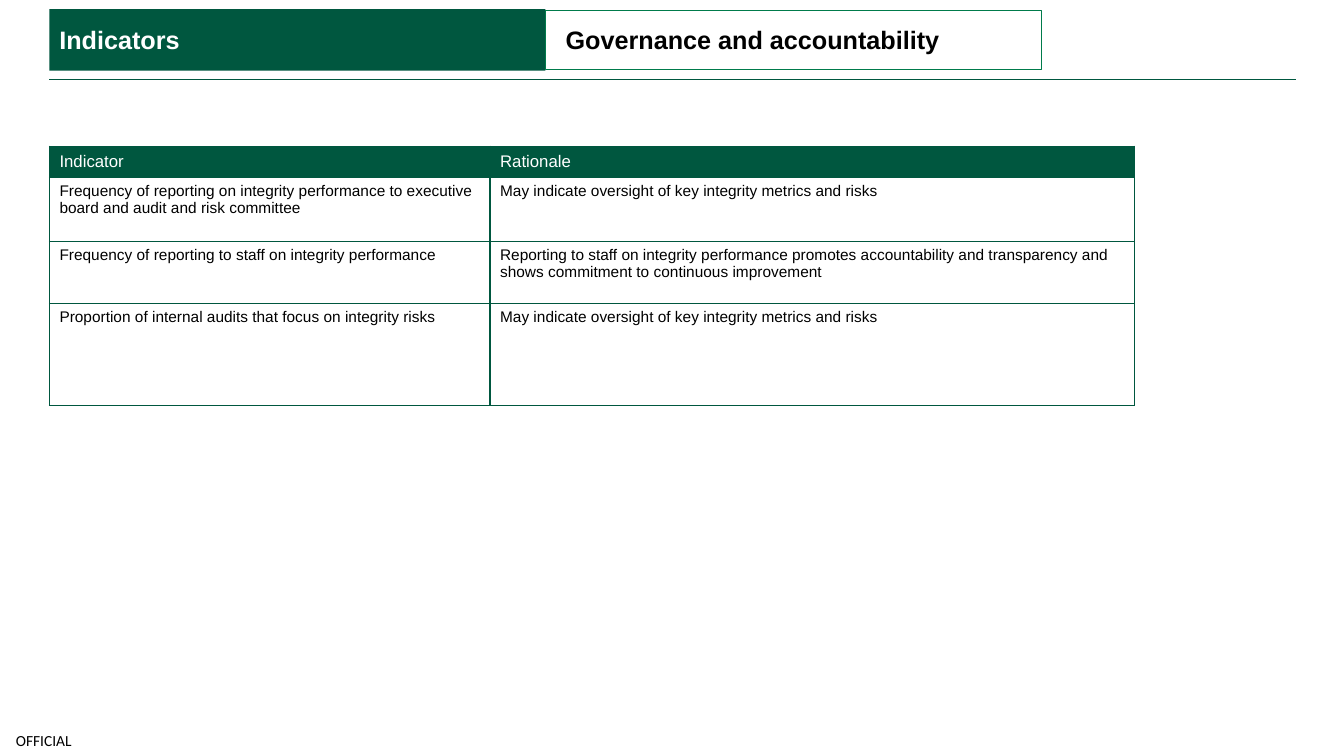
from dataclasses import dataclass

import pptx
import pptx.dml.color
import pptx.enum.shapes
import pptx.enum.text
import pptx.oxml
import pptx.oxml.ns
import pptx.util

RGBColor = pptx.dml.color.RGBColor
Align = pptx.enum.text.PP_ALIGN
Anchor = pptx.enum.text.MSO_ANCHOR

PX = 9144  # EMU per px, 100 px to the inch
GREEN = RGBColor(0x00, 0x57, 0x3F)
OUTLINE_GREEN = RGBColor(0x00, 0x7B, 0x4B)
WHITE = RGBColor(0xFF, 0xFF, 0xFF)
BLACK = RGBColor(0x00, 0x00, 0x00)

LEFT = 49
COLUMN_WIDTHS = (437, 639)
ROW_HEIGHTS = (31, 64, 61, 101)
ROWS = (
    ("Indicator", "Rationale"),
    ("Frequency of reporting on integrity performance to executive board and audit and risk committee",
     "May indicate oversight of key integrity metrics and risks"),
    ("Frequency of reporting to staff on integrity performance",
     "Reporting to staff on integrity performance promotes accountability and transparency"
     " and shows commitment to continuous improvement"),
    ("Proportion of internal audits that focus on integrity risks",
     "May indicate oversight of key integrity metrics and risks"),
)


@dataclass(frozen=True)
class Banner:
    text: str
    left: int
    top: int
    height: int
    inset: int
    fill: RGBColor
    color: RGBColor
    line: RGBColor | None = None
    width: int = 492


BANNERS = (
    Banner("Indicators", LEFT, 9, 61, 10, GREEN, WHITE),
    Banner("Governance and accountability", 541, 10, 59, 20, WHITE, BLACK, OUTLINE_GREEN),
)


def px(length: int) -> pptx.util.Emu:
    return pptx.util.Emu(length * PX)


def write(frame, text: str, size: int, color: RGBColor, name: str = "Arial",
          bold: bool = False, align: Align = Align.LEFT) -> None:
    frame.text = text
    frame.word_wrap = True
    para = frame.paragraphs[0]
    para.alignment = align
    font = para.runs[0].font
    font.name, font.size, font.bold = name, pptx.util.Pt(size), bold
    font.color.rgb = color


def set_margins(frame, left: int, other: int) -> None:
    frame.margin_left = px(left)
    frame.margin_top = frame.margin_right = frame.margin_bottom = px(other)


def add_rule(slide) -> None:
    rule = slide.shapes.add_connector(
        pptx.enum.shapes.MSO_CONNECTOR.STRAIGHT, px(LEFT), px(79), px(1285), px(79))
    rule.line.color.rgb = GREEN
    rule.line.width = pptx.util.Pt(1)
    rule._element.spPr.append(pptx.oxml.parse_xml(
        f"<a:effectLst {pptx.oxml.ns.nsdecls('a')}/>"))


def add_marking(slide) -> None:
    box = slide.shapes.add_textbox(px(0), px(719), px(87), px(31))
    set_margins(box.text_frame, 0, 0)
    box.text_frame.vertical_anchor = Anchor.MIDDLE
    write(box.text_frame, "OFFICIAL", 11, BLACK, name="Calibri", align=Align.CENTER)


def add_banner(slide, banner: Banner) -> None:
    box = slide.shapes.add_shape(
        pptx.enum.shapes.MSO_SHAPE.RECTANGLE,
        px(banner.left), px(banner.top), px(banner.width), px(banner.height))
    box.shadow.inherit = False
    box.fill.solid()
    box.fill.fore_color.rgb = banner.fill
    if banner.line is None:
        box.line.fill.background()
    else:
        box.line.color.rgb = banner.line
        box.line.width = pptx.util.Pt(0.75)
    set_margins(box.text_frame, banner.inset, 10)
    box.text_frame.vertical_anchor = Anchor.MIDDLE
    write(box.text_frame, banner.text, 18, banner.color, bold=True)


def add_borders(cell) -> None:
    properties = cell._tc.get_or_add_tcPr()
    for side in ("lnL", "lnR", "lnT", "lnB"):
        properties.append(pptx.oxml.parse_xml(
            f'<a:{side} {pptx.oxml.ns.nsdecls("a")} w="{pptx.util.Pt(1)}">'
            f'<a:solidFill><a:srgbClr val="{GREEN}"/></a:solidFill></a:{side}>'))


def add_indicator_table(slide) -> None:
    table = slide.shapes.add_table(
        len(ROWS), len(COLUMN_WIDTHS), px(LEFT), px(145),
        px(sum(COLUMN_WIDTHS)), px(sum(ROW_HEIGHTS))).table
    table.horz_banding = False
    for column, width in zip(table.columns, COLUMN_WIDTHS):
        column.width = px(width)
    for row_index, (row, height, texts) in enumerate(zip(table.rows, ROW_HEIGHTS, ROWS)):
        row.height = px(height)
        is_header = row_index == 0
        for cell, text in zip(row.cells, texts):
            add_borders(cell)
            cell.fill.solid()
            cell.fill.fore_color.rgb = GREEN if is_header else WHITE
            cell.vertical_anchor = Anchor.MIDDLE if is_header else Anchor.TOP
            write(cell.text_frame, text, 12 if is_header else 11, WHITE if is_header else BLACK)


def main() -> None:
    deck = pptx.Presentation()
    deck.slide_width, deck.slide_height = px(1333), px(750)
    page = deck.slides.add_slide(deck.slide_layouts[6])

    # Rule under the heading and security marking
    add_rule(page)
    add_marking(page)

    # Indicators and their rationale
    add_indicator_table(page)

    # Heading banners
    for banner in BANNERS:
        add_banner(page, banner)

    deck.save("out.pptx")


if __name__ == "__main__":
    main()
